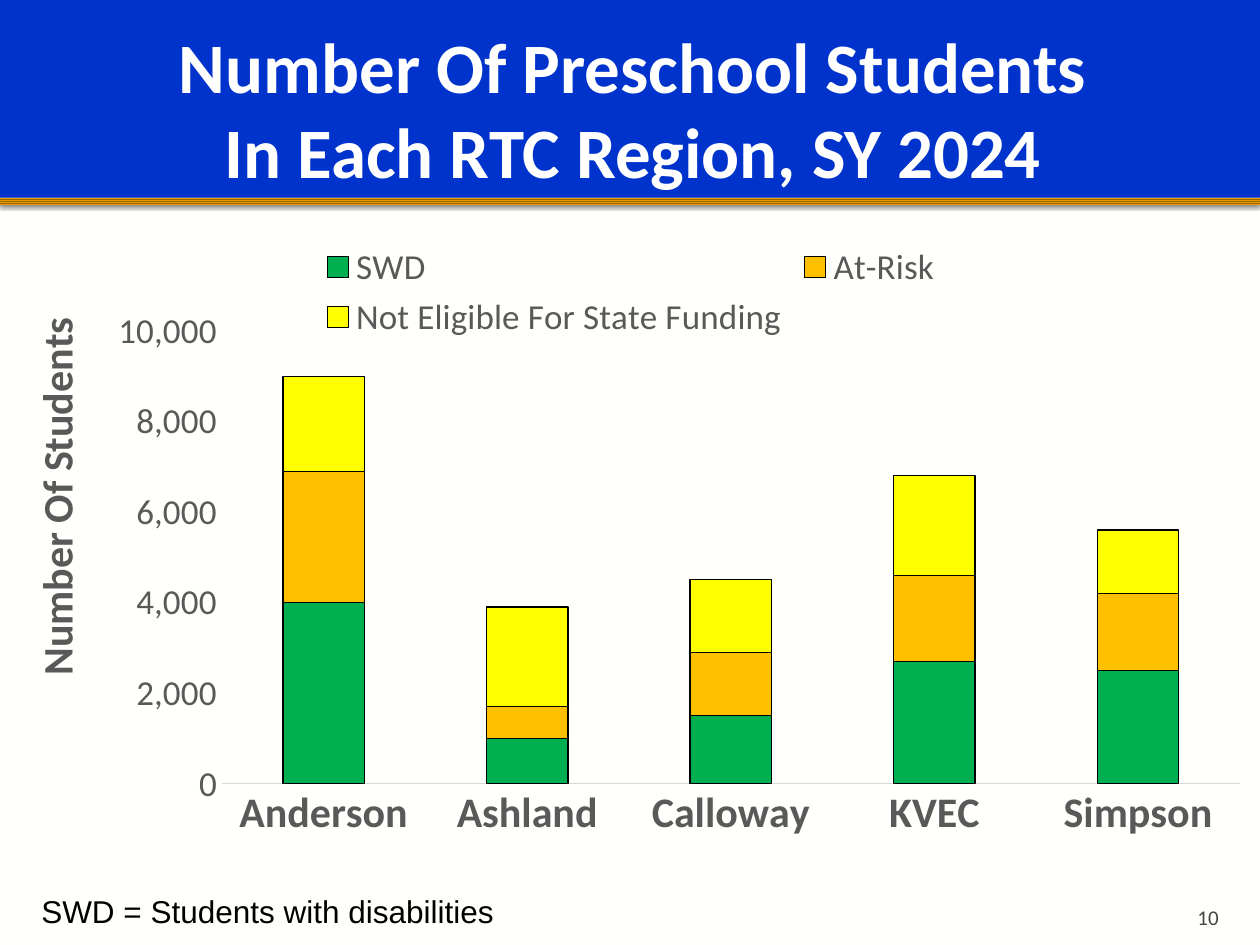
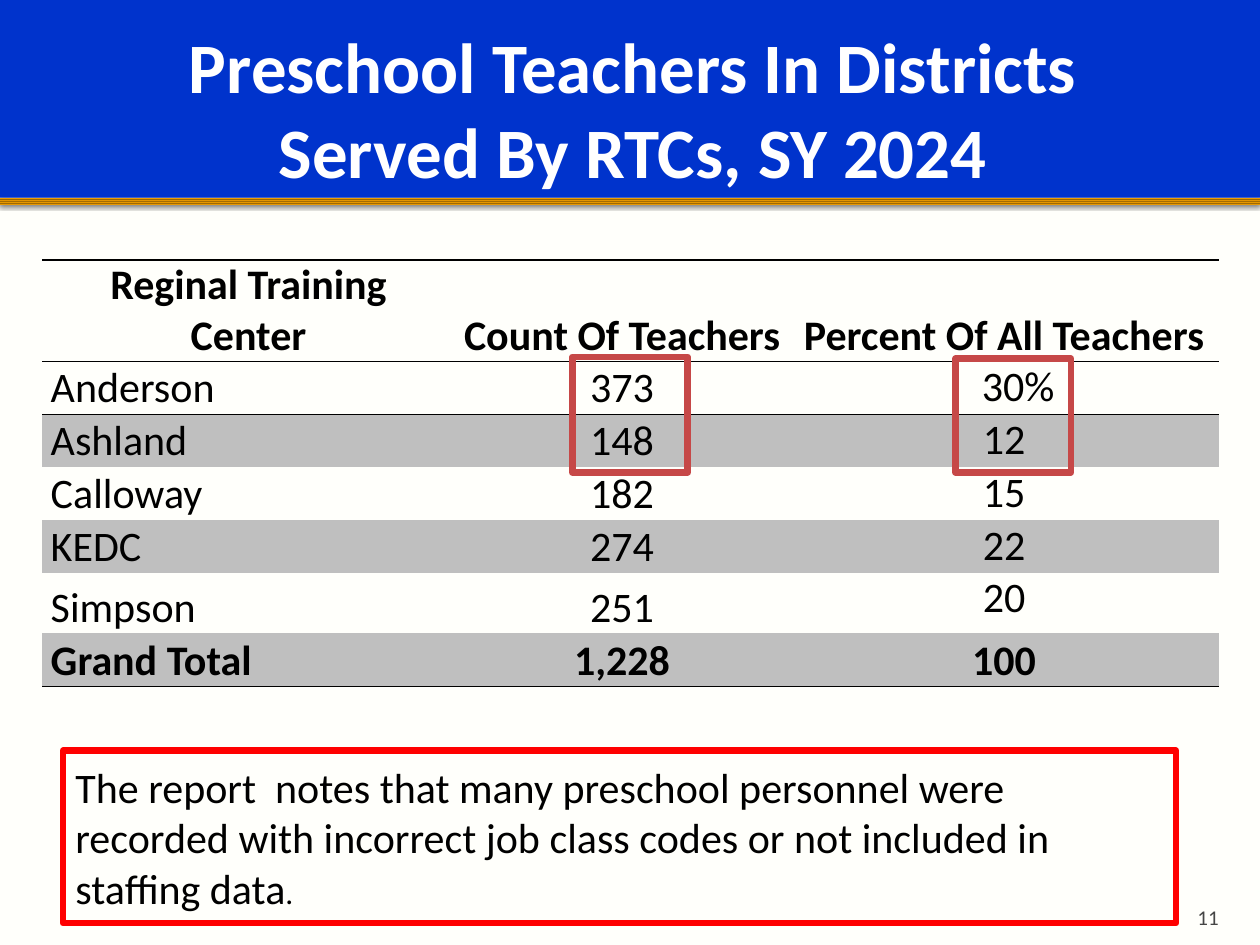
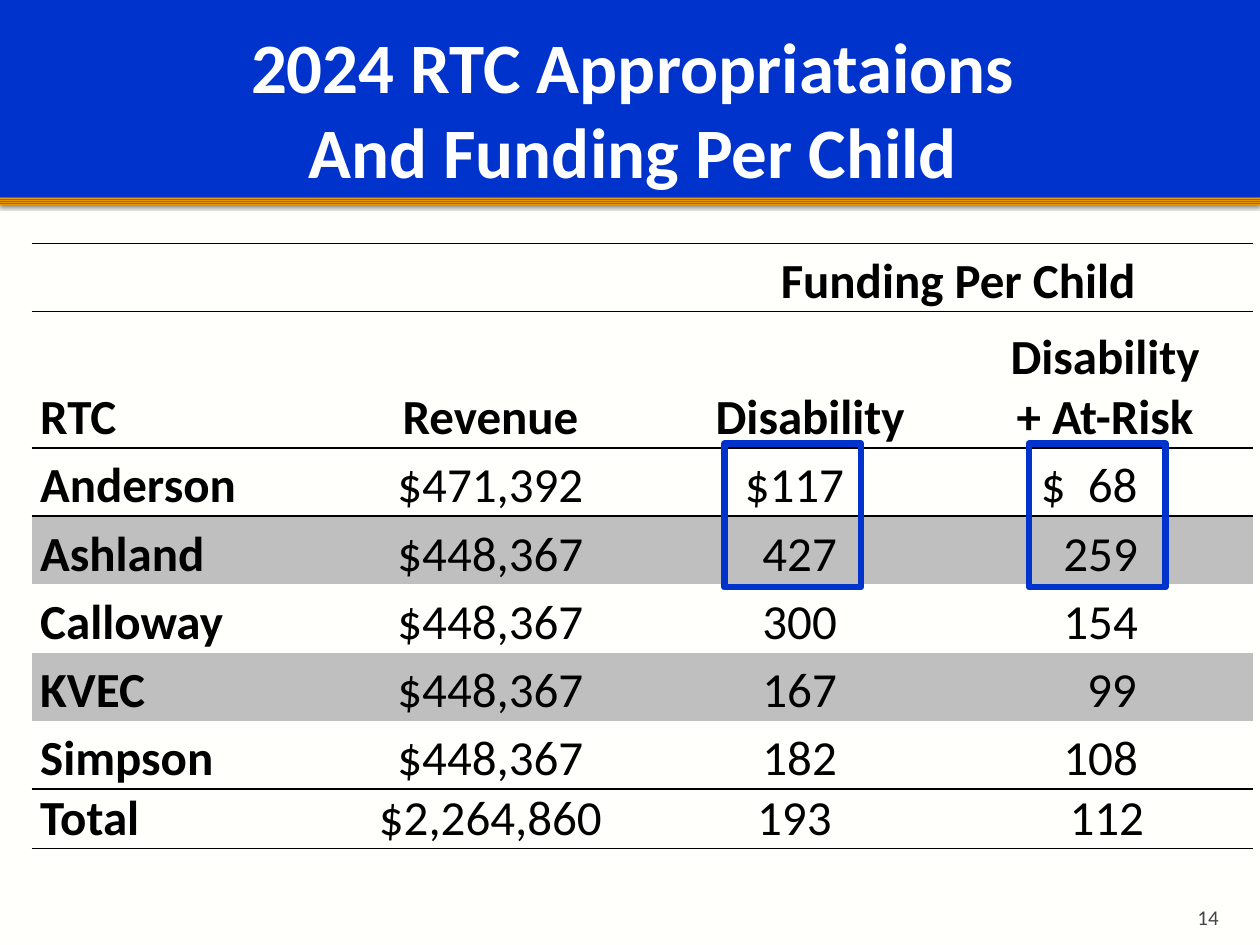
from dataclasses import dataclass

from pptx import Presentation
from pptx.chart.data import CategoryChartData
from pptx.dml.color import RGBColor
from pptx.enum.chart import XL_CHART_TYPE as ChartType, XL_LEGEND_POSITION as LegendPos, XL_TICK_MARK as Tick
from pptx.enum.shapes import MSO_SHAPE as Shape
from pptx.enum.text import MSO_ANCHOR as Anchor, MSO_AUTO_SIZE as AutoSize, PP_ALIGN as Align
from pptx.oxml import parse_xml
from pptx.oxml.ns import nsdecls, qn
from pptx.util import Pt


@dataclass(frozen=True)
class Theme:
    font: str = "Calibri"
    note_font: str = "Arial"
    page: str = "FFFFFB"
    band: str = "0033CC"
    gold: str = "FFA800"
    bronze: str = "825600"
    white: str = "FFFFFF"
    black: str = "000000"
    number: str = "454545"
    axis: str = "595959"
    axis_line: str = "D9D9D9"
    stripe: str = "BFBFBF"
    brick: str = "C64847"
    red: str = "FF0000"
    green: str = "00B050"
    amber: str = "FFC000"
    yellow: str = "FFFF00"
    title_size: float = 40.5
    large: float = 28
    body: float = 24
    label: float = 20
    note: float = 18
    small: float = 12
    frame_width: float = 3.78


T = Theme()
NO_STYLE = "{2D5ABB26-0587-4C30-8999-92F81FD0307C}"


def rgb(color):
    return RGBColor.from_string(color)


def set_font(font, size=T.body, color=T.black, bold=False, name=T.font):
    font.size, font.bold, font.name = Pt(size), bold, name
    font.color.rgb = rgb(color)


def write(tf, text, align=Align.LEFT, **fmt):
    tf.text = text
    for p in tf.paragraphs:
        p.alignment = align
        for r in p.runs:
            set_font(r.font, **fmt)


def add_text(slide, box, text, anchor=Anchor.TOP, bottom=3.6, **fmt):
    tf = slide.shapes.add_textbox(*map(Pt, box)).text_frame
    tf.word_wrap = True
    tf.vertical_anchor = anchor
    tf.margin_bottom = Pt(bottom)
    write(tf, text, **fmt)


def add_box(slide, box, fill=None, line=None):
    s = slide.shapes.add_shape(Shape.RECTANGLE, *map(Pt, box))
    s.shadow.inherit = False
    if fill:
        s.fill.solid()
        s.fill.fore_color.rgb = rgb(fill)
    else:
        s.fill.background()
    if line:
        s.line.color.rgb = rgb(line)
        s.line.width = Pt(T.frame_width)
    else:
        s.line.fill.background()
    return s


def add_gold_rule(slide, box):
    s = add_box(slide, box)
    s.fill.gradient()
    s.fill.gradient_angle = 270
    stops = s.element.spPr.find(".//" + qn("a:gsLst"))
    for stop in list(stops):
        stops.remove(stop)
    for i, pos in enumerate((0, 13, 28, 43, 58, 72, 87, 100)):
        color = T.gold if i % 2 else T.bronze
        stops.append(parse_xml(
            f'<a:gs {nsdecls("a")} pos="{pos * 1000}"><a:srgbClr val="{color}"/></a:gs>'))
    s.element.spPr.find(qn("a:effectLst")).append(parse_xml(
        f'<a:outerShdw {nsdecls("a")} blurRad="{Pt(2.5)}" dist="{Pt(0.8)}" dir="5400000" rotWithShape="0">'
        f'<a:srgbClr val="{T.black}"><a:alpha val="60000"/></a:srgbClr></a:outerShdw>'))
    return s


def move_band_to_layout(slide):
    band = add_box(slide, (0, 0, 720, 113), fill=T.band)
    rule = add_gold_rule(slide, (0, 113, 720, 4))
    for s in (band, rule):
        slide.slide_layout.shapes.element.insert(2, s.element)


def add_slide(prs, title, number):
    slide = prs.slides.add_slide(prs.slide_layouts[5])
    s = slide.shapes.title
    s.left, s.top, s.width, s.height = map(Pt, (36, 12, 648, 99))
    tf = s.text_frame
    tf.auto_size = AutoSize.NONE
    tf.vertical_anchor = Anchor.MIDDLE
    tf.margin_left = Pt(7.2)
    tf.margin_right = tf.margin_top = tf.margin_bottom = Pt(3.6)
    write(tf, title, align=Align.CENTER, size=T.title_size, color=T.white, bold=True)
    add_text(slide, (646, 510, 57.5, 21.5), str(number), anchor=Anchor.BOTTOM, bottom=0,
             align=Align.RIGHT, size=T.small, color=T.number)
    return slide


def set_layout(parent, index, **values):
    old = parent.find(qn("c:layout"))
    if old is not None:
        parent.remove(old)
    parts = "".join(f'<c:{k} val="{v}"/>' for k, v in values.items())
    parent.insert(index, parse_xml(
        f'<c:layout {nsdecls("c")}><c:manualLayout>{parts}</c:manualLayout></c:layout>'))


def add_stacked_chart(slide, box, categories, series, axis_title):
    data = CategoryChartData(number_format="#,##0")
    data.categories = categories
    for name, values, _ in series:
        data.add_series(name, values)
    chart = slide.shapes.add_chart(ChartType.COLUMN_STACKED, *map(Pt, box), data).chart
    chart.has_title = False
    set_font(chart.font, size=16)
    plot = chart.plots[0]
    plot.gap_width, plot.overlap, plot.vary_by_categories = 150, 100, False
    for ser, (_, _, color) in zip(plot.series, series):
        ser.format.fill.solid()
        ser.format.fill.fore_color.rgb = rgb(color)
        ser.format.line.color.rgb = rgb(T.black)
        ser.format.line.width = Pt(0.75)

    cat, val = chart.category_axis, chart.value_axis
    for axis in (cat, val):
        axis.major_tick_mark = axis.minor_tick_mark = Tick.NONE
        axis.has_major_gridlines = False
    set_font(cat.tick_labels.font, color=T.axis, bold=True)
    cat.format.line.color.rgb = rgb(T.axis_line)
    cat.format.line.width = Pt(0.75)
    set_font(val.tick_labels.font, size=T.label, color=T.axis)
    val.tick_labels.number_format = "#,##0"
    val.tick_labels.number_format_is_linked = False
    val.format.line.fill.background()
    val.minimum_scale, val.maximum_scale, val.major_unit = 0, 10000, 2000

    tf = val.axis_title.text_frame
    write(tf, axis_title, align=Align.CENTER, color=T.axis, bold=True)
    body = val.axis_title.element.find(".//" + qn("a:bodyPr"))
    body.set("rot", "-5400000")
    body.set("vert", "horz")
    set_layout(val.axis_title.element, 1, xMode="edge", yMode="edge", x=0.015, y=0.115)
    set_layout(chart.element.find(".//" + qn("c:plotArea")), 0, layoutTarget="inner",
               xMode="edge", yMode="edge", x=0.175, y=0.145, w=0.809, h=0.645)
    chart.has_legend = True
    chart.legend.position = LegendPos.TOP
    chart.legend.include_in_layout = False
    set_font(chart.legend.font, size=T.label, color=T.axis)


def add_rule(cell, side):
    cell.fill
    cell._tc.get_or_add_tcPr().insert(0, parse_xml(
        f'<a:{side} {nsdecls("a")} w="{Pt(1)}"><a:solidFill>'
        f'<a:srgbClr val="{T.black}"/></a:solidFill></a:{side}>'))


def add_table(slide, origin, widths, heights, rows, size, is_bold, shaded, rules, spans=(), indents=None, top=()):
    box = (*origin, sum(widths), sum(heights))
    s = slide.shapes.add_table(len(rows), len(widths), *map(Pt, box))
    s.element.find(".//" + qn("a:tableStyleId")).text = NO_STYLE
    table = s.table
    table.first_row = table.horz_banding = False
    for col, width in zip(table.columns, widths):
        col.width = Pt(width)
    for row, height in zip(table.rows, heights):
        row.height = Pt(height)
    for r, first, last in spans:
        table.cell(r, first).merge(table.cell(r, last))
    for r, row in enumerate(rows):
        for c, text in enumerate(row):
            cell = table.cell(r, c)
            cell.margin_left = Pt(5 + (indents or {}).get((r, c), 0))
            cell.margin_right = Pt(5)
            cell.margin_top = cell.margin_bottom = 0
            cell.vertical_anchor = Anchor.TOP if (r, c) in top else Anchor.BOTTOM
            if text:
                align = Align.LEFT if c == 0 and r else Align.CENTER
                write(cell.text_frame, text, align=align, size=size, bold=is_bold(r, c))
            if r in shaded:
                cell.fill.solid()
                cell.fill.fore_color.rgb = rgb(T.stripe)
            else:
                cell.fill.background()
            if r + 1 in rules:
                add_rule(cell, "a:lnB"[2:])
            if r in rules:
                add_rule(cell, "lnT")


def build_students(prs):
    slide = add_slide(prs, "Number Of Preschool Students\vIn Each RTC Region, SY 2024", 10)
    add_stacked_chart(
        slide, (1, 131, 719, 401),
        ("Anderson", "Ashland", "Calloway", "KVEC", "Simpson"),
        (("SWD", (4000, 1000, 1500, 2700, 2500), T.green),
         ("At-Risk", (2900, 700, 1400, 1900, 1700), T.amber),
         ("Not Eligible For State Funding", (2100, 2200, 1600, 2200, 1400), T.yellow)),
        "Number Of Students")
    add_text(slide, (16.5, 506, 420, 29), "SWD = Students with disabilities",
             size=T.note, name=T.note_font)
    return slide


def build_teachers(prs):
    slide = add_slide(prs, "Preschool Teachers In Districts\vServed By RTCs, SY 2024", 11)
    rows = (("Reginal Training Center", "Count Of Teachers", "Percent Of All Teachers"),
            ("Anderson", "373", "30%"),
            ("Ashland", "148", "12"),
            ("Calloway", "182", "15"),
            ("KEDC", "274", "22"),
            ("Simpson", "251", "20"),
            ("Grand Total", "1,228", "100"))
    add_table(slide, (24, 148.5), (236, 191, 245.5), (58, *[30.25] * 4, 34.5, 30.25), rows, T.body,
              is_bold=lambda r, c: r in (0, 6), shaded=(2, 4, 6), rules=(0, 1, 7),
              indents={(1, 2): 16}, top=[(r, 2) for r in range(1, 6)])
    add_box(slide, (327, 204, 66, 66), line=T.brick)
    add_box(slide, (546, 205, 66, 65), line=T.brick)
    tf = add_box(slide, (36, 429, 636, 98.5), line=T.red).text_frame
    tf.word_wrap = True
    tf.vertical_anchor = Anchor.MIDDLE
    write(tf, "The report  notes that many preschool personnel were recorded with "
              "incorrect job class codes or not included in staffing data")
    r = tf.paragraphs[0].add_run()
    r.text = "."
    set_font(r.font, size=T.note)


def build_funding(prs):
    slide = add_slide(prs, "2024 RTC Appropriataions\vAnd Funding Per Child", 14)
    rows = (("", "", "Funding Per Child", "", ""),
            ("RTC", "Revenue", "Disability", "", "Disability\n+ At-Risk"),
            ("Anderson", "$471,392", "$117", "$  68", ""),
            ("Ashland", "$448,367", "427", "259", ""),
            ("Calloway", "$448,367", "300", "154", ""),
            ("KVEC", "$448,367", "167", "99", ""),
            ("Simpson", "$448,367", "182", "108", ""),
            ("Total", "$2,264,860", "193", "112", ""))
    indents = {(r, c): shift for r in range(3, 7) for c, shift in ((2, 6), (3, 13))}
    indents.update({(5, 3): 26, (7, 3): 20})
    add_table(slide, (18, 139), (163.5, 197.5, 150, 18, 169), (39, 78, *[39] * 5, 34), rows, T.large,
              is_bold=lambda r, c: r < 2 or c == 0, shaded=(3, 5), rules=(0, 1, 2, 7, 8),
              spans=((0, 2, 4), (1, 2, 3), *[(r, 3, 4) for r in range(2, 8)]), indents=indents)
    for left in (414, 588):
        add_box(slide, (left, 253.5, 78, 82), line=T.band)


def main():
    prs = Presentation()
    prs.slide_width, prs.slide_height = Pt(720), Pt(540)
    fill = prs.slide_master.background.fill
    fill.solid()
    fill.fore_color.rgb = rgb(T.page)
    first = build_students(prs)
    build_teachers(prs)
    build_funding(prs)
    move_band_to_layout(first)
    prs.save("out.pptx")


if __name__ == "__main__":
    main()
